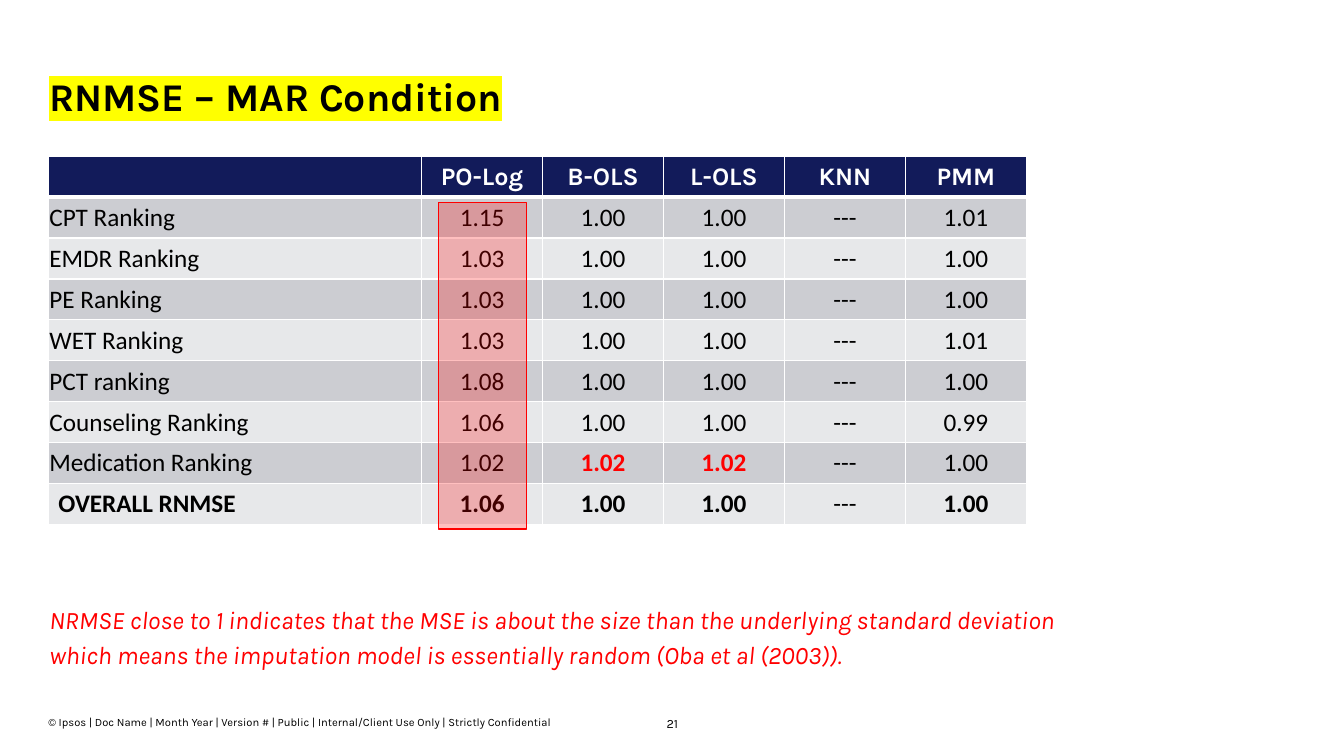
import pptx
import pptx.util
import pptx.dml.color
import pptx.enum.shapes
import pptx.enum.text
import pptx.oxml.ns
import lxml.etree as etree

COLORS = {"navy": "121B5A", "band_dark": "CCCDD2", "band_light": "E7E8EA",
          "white": "FFFFFF", "black": "000000", "red": "FF0000", "yellow": "FFFF00"}
HEADING_FONT, TABLE_FONT = "Karla", "Calibri"
WIDTH, HEIGHT = pptx.util.Inches(13.33), pptx.util.Inches(7.5)
ALIGN = pptx.enum.text.PP_ALIGN
ANCHOR = pptx.enum.text.MSO_ANCHOR

HEADERS = ["", "PO-Log", "B-OLS", "L-OLS", "KNN", "PMM"]
RANKINGS = [
    ["CPT Ranking", "1.15", "1.00", "1.00", "---", "1.01"],
    ["EMDR Ranking", "1.03", "1.00", "1.00", "---", "1.00"],
    ["PE Ranking", "1.03", "1.00", "1.00", "---", "1.00"],
    ["WET Ranking", "1.03", "1.00", "1.00", "---", "1.01"],
    ["PCT ranking", "1.08", "1.00", "1.00", "---", "1.00"],
    ["Counseling Ranking", "1.06", "1.00", "1.00", "---", "0.99"],
    ["Medication Ranking", "1.02", "1.02", "1.02", "---", "1.00"],
    ["OVERALL RNMSE", "1.06", "1.00", "1.00", "---", "1.00"],
]
FLAGGED = {(7, 2), (7, 3)}  # row, column of the values in red
LABEL_COLUMN, METHOD_COLUMN = 27.77, 9  # percent of slide width


def across(percent):
    return round(WIDTH * percent / 100)


def down(percent):
    return round(HEIGHT * percent / 100)


def area(left, top, width, height):
    """Turn percentages of the slide into a position and size."""
    return across(left), down(top), across(width), down(height)


def rgb(name):
    return pptx.dml.color.RGBColor.from_string(COLORS[name])


def add_xml(parent, tag, **attributes):
    return etree.SubElement(parent, pptx.oxml.ns.qn(tag), attributes)


def style(paragraph, size, color, face=HEADING_FONT, bold=False, italic=False):
    font = paragraph.font
    font.size, font.name = pptx.util.Pt(size), face
    font.bold, font.italic = bold, italic
    font.color.rgb = rgb(color)


def add_text(slide, place, text, size, color="black", anchor=ANCHOR.TOP,
             align=ALIGN.LEFT, spacing=1.0, **look):
    frame = slide.shapes.add_textbox(*place).text_frame
    frame.word_wrap = True
    frame.vertical_anchor = anchor
    frame.margin_left = frame.margin_right = frame.margin_top = frame.margin_bottom = 0
    paragraph = frame.paragraphs[0]
    paragraph.text = text
    paragraph.alignment, paragraph.line_spacing = align, spacing
    style(paragraph, size, color, **look)
    return paragraph


def mark_text(run, color):
    marker = add_xml(run.font._element, "a:highlight")
    add_xml(marker, "a:srgbClr", val=COLORS[color])


def border_cell(cell, bottom=1, top=1):
    properties = cell._tc.get_or_add_tcPr()
    for side, points in (("L", 1), ("R", 1), ("T", top), ("B", bottom)):
        line = add_xml(properties, f"a:ln{side}", w=str(pptx.util.Pt(points)))
        add_xml(add_xml(line, "a:solidFill"), "a:srgbClr", val=COLORS["white"])


def fill_cell(cell, row, column, text):
    header, overall = row == 0, row == len(RANKINGS)
    flagged = (row, column) in FLAGGED
    border_cell(cell, bottom=3 if header else 1, top=3 if row == 1 else 1)
    cell.fill.solid()
    cell.fill.fore_color.rgb = rgb(
        "navy" if header else "band_dark" if row % 2 else "band_light")
    cell.vertical_anchor = ANCHOR.BOTTOM if header else ANCHOR.MIDDLE
    if not header and not (overall and column == 0):
        cell.margin_left = cell.margin_right = cell.margin_top = pptx.util.Inches(0.01)
        cell.margin_bottom = 0
    paragraph = cell.text_frame.paragraphs[0]
    if text:
        paragraph.text = text
    paragraph.alignment = ALIGN.CENTER if column else ALIGN.LEFT
    style(paragraph, 18, "white" if header else "red" if flagged else "black",
          HEADING_FONT if header else TABLE_FONT,
          bold=header or flagged or (overall and text != "---"))


def add_ranking_table(slide, place):
    rows = [HEADERS] + RANKINGS
    table = slide.shapes.add_table(len(rows), len(HEADERS), *place).table
    table.first_row = table.horz_banding = False
    for column, part in enumerate(table.columns):
        part.width = across(METHOD_COLUMN if column else LABEL_COLUMN)
    for row, texts in enumerate(rows):
        for column, text in enumerate(texts):
            fill_cell(table.cell(row, column), row, column, text)


def add_column_marker(slide, place, color, opacity):
    marker = slide.shapes.add_shape(pptx.enum.shapes.MSO_SHAPE.RECTANGLE, *place)
    marker.shadow.inherit = False
    marker.fill.solid()
    marker.fill.fore_color.rgb = marker.line.color.rgb = rgb(color)
    marker.line.width = pptx.util.Pt(1)
    tint = marker.fill._xPr.find(".//" + pptx.oxml.ns.qn("a:srgbClr"))
    add_xml(tint, "a:alpha", val=str(opacity * 1000))


def main():
    deck = pptx.Presentation()
    deck.slide_width, deck.slide_height = WIDTH, HEIGHT
    slide = deck.slides.add_slide(deck.slide_layouts[6])

    # Footer
    add_text(slide, area(3.6, 94.67, 38.33, 1.73),
             "© Ipsos | Doc Name | Month Year | Version # | Public | "
             "Internal/Client Use Only | Strictly Confidential",
             8, anchor=ANCHOR.BOTTOM)
    add_text(slide, area(48.01, 94.53, 4.05, 2), "21", 9,
             align=ALIGN.CENTER, spacing=1.1)

    # Title
    title = add_text(slide, area(3.68, 10.27, 92.72, 10.4),
                     "RNMSE – MAR Condition", 28, spacing=0.9, bold=True)
    mark_text(title.runs[0], "yellow")

    # Results, with the PO-Log column marked
    table_width = LABEL_COLUMN + METHOD_COLUMN * (len(HEADERS) - 1)
    add_ranking_table(slide, area(3.6, 20.67, table_width, 48.67))
    add_column_marker(slide, area(32.63, 26.8, 6.53, 43.2), "red", 25)

    # Reading note
    add_text(slide, area(3.68, 79.33, 75.77, 8.8),
             "NRMSE close to 1 indicates that the MSE is about the size than the "
             "underlying standard deviation which means the imputation model is "
             "essentially random (Oba et al (2003)).",
             18, "red", spacing=1.15, italic=True)

    deck.save("out.pptx")


if __name__ == "__main__":
    main()
